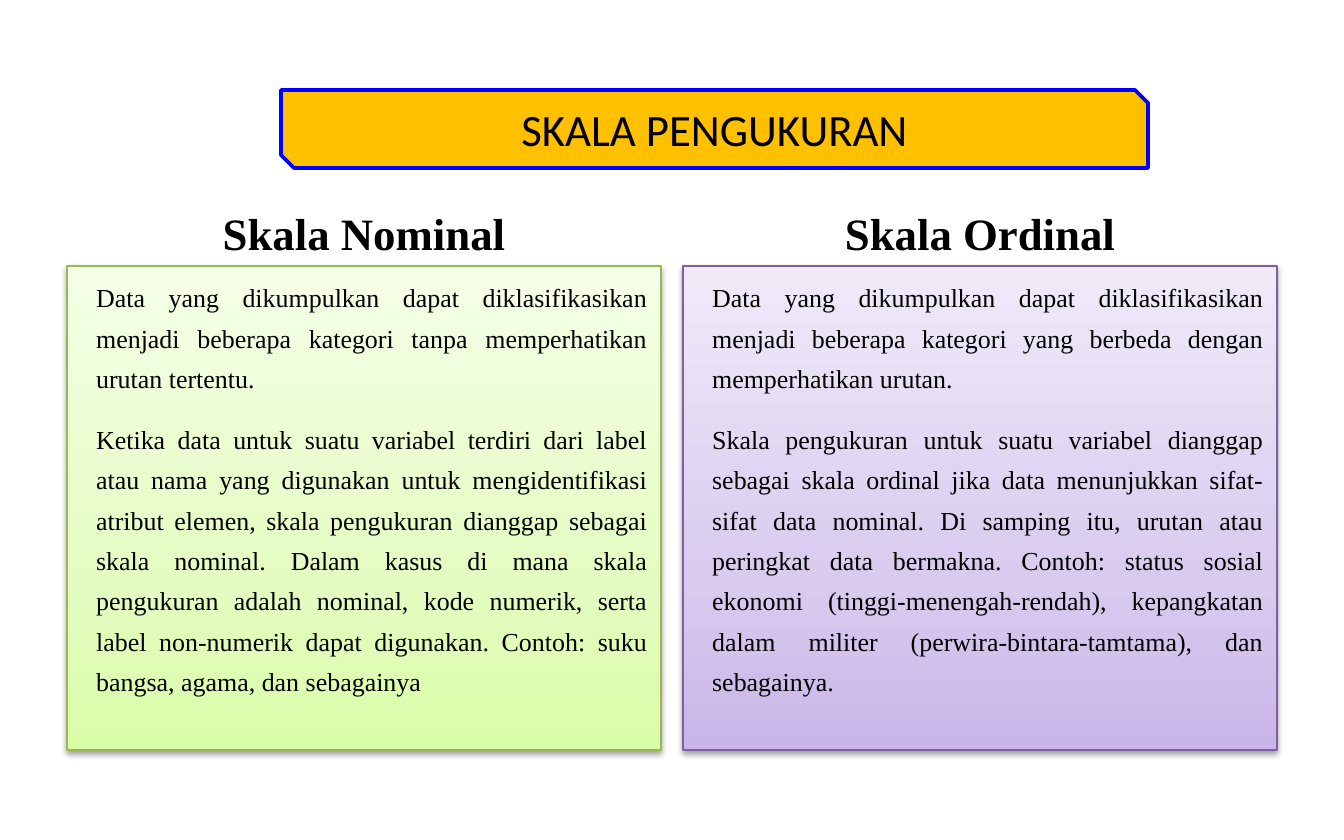
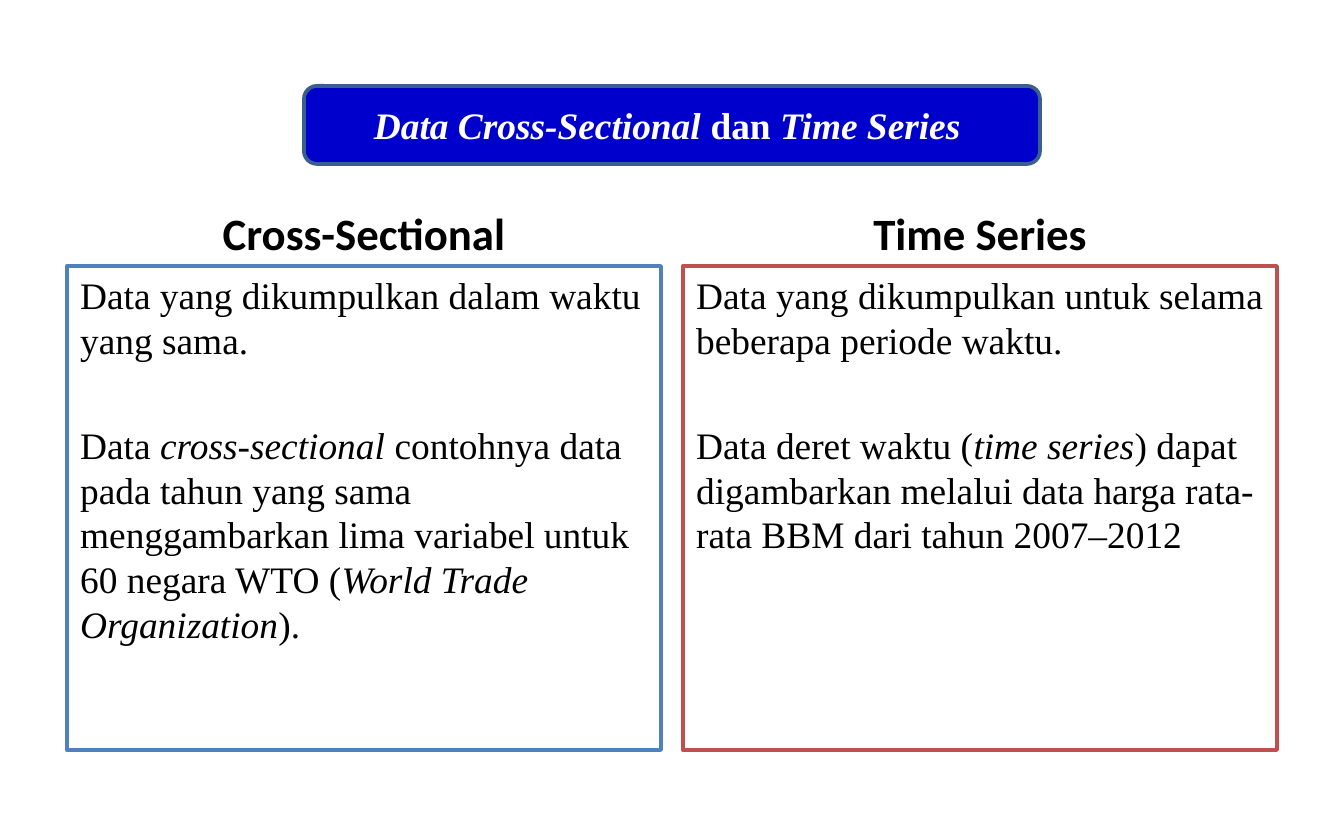
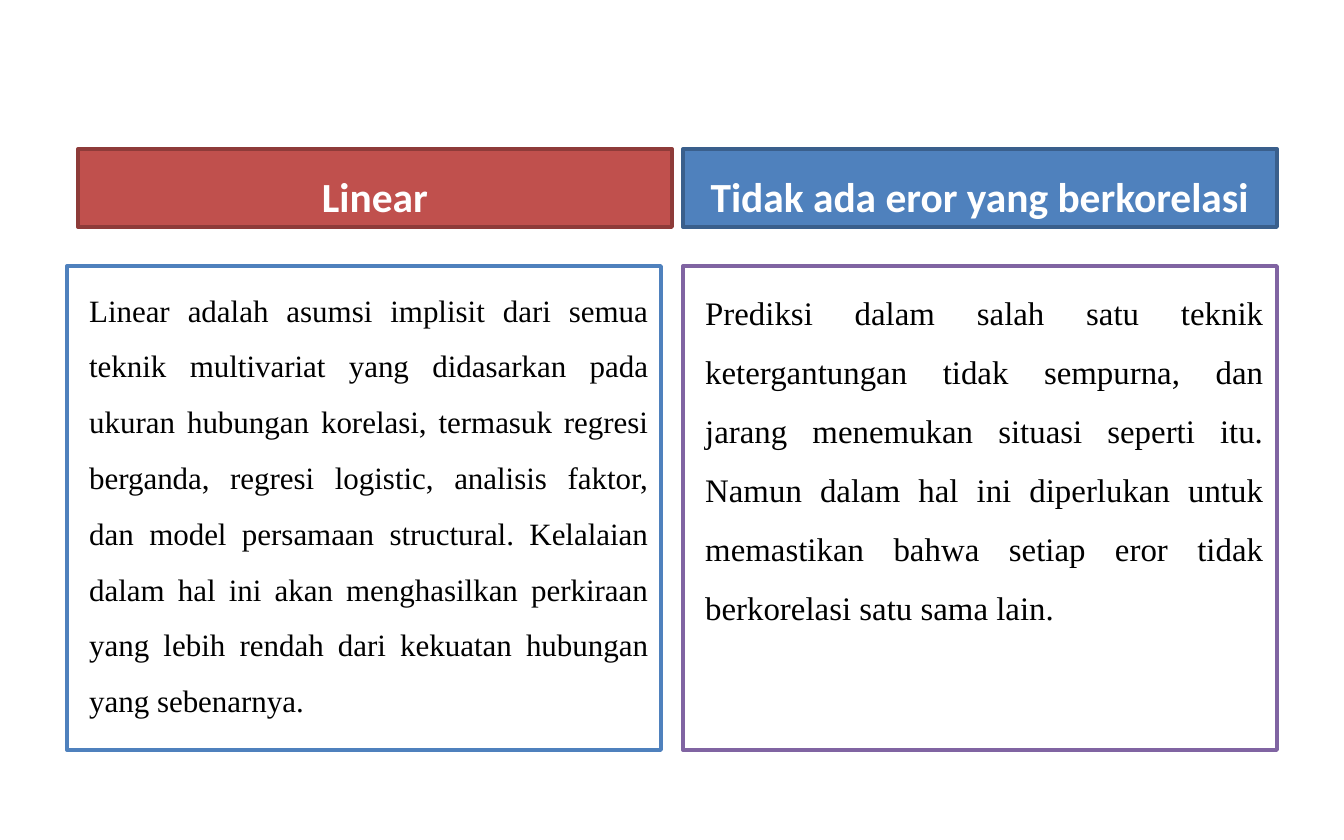
import copy
import dataclasses
import typing

import lxml.etree
import pptx
import pptx.dml.color
import pptx.enum.shapes
import pptx.enum.text
import pptx.oxml.ns
import pptx.shapes.autoshape
import pptx.slide
import pptx.util

SHAPE = pptx.enum.shapes.MSO_SHAPE
ALIGN = pptx.enum.text.PP_ALIGN
ANCHOR = pptx.enum.text.MSO_ANCHOR
SCALE = 914400 / 134.4
WIDE, HIGH = 1344, 840


@dataclasses.dataclass(frozen=True)
class Theme:
    serif: str = "Times New Roman"
    sans: str = "Calibri"
    black: str = "000000"
    white: str = "FFFFFF"
    gold: str = "FFC000"
    pure: str = "0000FF"
    royal: str = "0000CC"
    blue: str = "4F81BD"
    navy: str = "3A5F8C"
    red: str = "C0504D"
    maroon: str = "8E3B39"
    purple: str = "8064A2"
    violet: str = "7D60A0"
    green: str = "98B955"
    limes: tuple[str, ...] = ("DAFDA7", "E4FCC2", "F5FFE7")
    lilacs: tuple[str, ...] = ("C9B5E8", "D8CBEE", "F0EAF9")
    stops: tuple[float, ...] = (0, 0.35, 1)
    head: float = 24
    label: float = 22.2
    title: float = 20
    scale: float = 13.9
    linear: float = 16.6
    error: float = 17.6
    thin: float = 0.75
    thick: float = 2


T = Theme()


@dataclasses.dataclass(frozen=True)
class Style:
    font: str
    size: float
    color: str = T.black
    bold: bool = False
    align: typing.Any = ALIGN.CENTER
    anchor: typing.Any = ANCHOR.MIDDLE
    indent: int = 0
    lead: float = 1.0
    before: float = 0
    after: float = 0


class Span(typing.NamedTuple):
    text: str
    slant: bool = False


class Area(typing.NamedTuple):
    left: int
    top: int
    width: int
    height: int


Paras = list[list[Span]]


@dataclasses.dataclass(frozen=True)
class Box:
    area: Area
    style: Style
    paras: Paras
    fill: str | tuple[str, ...] | None = None
    line: str | None = None
    weight: float = T.thick
    form: typing.Any = SHAPE.RECTANGLE


def note(size: float, **more: typing.Any) -> Style:
    return Style(T.serif, size, align=ALIGN.JUSTIFY, anchor=ANCHOR.TOP, **more)


SERIF_HEAD = Style(T.serif, T.head, bold=True, anchor=ANCHOR.BOTTOM)
SANS_HEAD = dataclasses.replace(SERIF_HEAD, font=T.sans)
LABEL = Style(T.sans, T.label, T.white, True, anchor=ANCHOR.BOTTOM)
BANNER = Style(T.sans, T.head)
TITLE = Style(T.serif, T.title, T.white, True)
SCALE_NOTE = note(T.scale, indent=16, lead=1.3, before=2.8, after=8)
DATA_NOTE = Style(T.serif, T.title, align=ALIGN.LEFT, anchor=ANCHOR.TOP, before=32)
LINEAR_NOTE = note(T.linear, indent=9, lead=1.5)
ERROR_NOTE = note(T.error, indent=9, lead=1.5, after=8)

COL_WIDE, COL_GAP, MARGIN = 594, 22, 67
HEAD_HIGH = 78
HEADS, BODIES = (
    [Area(MARGIN + i * (COL_WIDE + COL_GAP), top, COL_WIDE, high) for i in range(2)]
    for top, high in ((188, HEAD_HIGH), (266, 484))
)


def plain(*texts: str) -> Paras:
    return [[Span(text)] for text in texts]


def px(count: int) -> pptx.util.Emu:
    return pptx.util.Emu(round(count * SCALE))


def rgb(code: str) -> pptx.dml.color.RGBColor:
    return pptx.dml.color.RGBColor.from_string(code)


def blend(shape: pptx.shapes.autoshape.Shape, colors: tuple[str, ...]) -> None:
    shape.fill.gradient()
    shape.fill.gradient_angle = 90
    stops = shape._element.spPr.find(".//" + pptx.oxml.ns.qn("a:gsLst"))
    stops.insert(1, copy.deepcopy(stops[0]))
    for stop, color, place in zip(shape.fill.gradient_stops, colors, T.stops):
        stop.color.rgb = rgb(color)
        stop.position = place


def shade(shape: pptx.shapes.autoshape.Shape) -> None:
    qn = pptx.oxml.ns.qn
    effects = shape._element.spPr.find(qn("a:effectLst"))
    shadow = lxml.etree.SubElement(
        effects, qn("a:outerShdw"), blurRad=str(pptx.util.Pt(3.1)),
        dist=str(pptx.util.Pt(1.6)), dir="5400000", rotWithShape="0")
    color = lxml.etree.SubElement(shadow, qn("a:srgbClr"), val=T.black)
    lxml.etree.SubElement(color, qn("a:alpha"), val="38000")


def write(frame: typing.Any, style: Style, paras: Paras) -> None:
    frame.word_wrap = True
    frame.vertical_anchor = style.anchor
    for index, spans in enumerate(paras):
        para = frame.add_paragraph() if index else frame.paragraphs[0]
        para.alignment = style.align
        para.line_spacing = style.lead
        para.space_before = pptx.util.Pt(style.before if index else 0)
        para.space_after = pptx.util.Pt(style.after)
        props = para._p.get_or_add_pPr()
        props.set("marL", str(px(style.indent)))
        props.set("indent", "0")
        for span in spans:
            run = para.add_run()
            run.text = span.text
            run.font.name = style.font
            run.font.size = pptx.util.Pt(style.size)
            run.font.bold = style.bold
            run.font.italic = span.slant
            run.font.color.rgb = rgb(style.color)


def draw(slide: pptx.slide.Slide, box: Box) -> None:
    place = [px(side) for side in box.area]
    if box.fill is None:
        shape = slide.shapes.add_textbox(*place)
    else:
        shape = slide.shapes.add_shape(box.form, *place)
        shape.shadow.inherit = False
        if isinstance(box.fill, tuple):
            blend(shape, box.fill)
            shade(shape)
        else:
            shape.fill.solid()
            shape.fill.fore_color.rgb = rgb(box.fill)
        shape.line.color.rgb = rgb(box.line)
        shape.line.width = pptx.util.Pt(box.weight)
    write(shape.text_frame, box.style, box.paras)


SCALES = [
    Box(HEADS[0], SERIF_HEAD, plain("Skala Nominal")),
    Box(BODIES[0], SCALE_NOTE, plain(
        "Data yang dikumpulkan dapat diklasifikasikan menjadi beberapa kategori "
        "tanpa memperhatikan urutan tertentu. ",
        "Ketika data untuk suatu variabel terdiri dari label atau nama yang digunakan "
        "untuk mengidentifikasi atribut elemen, skala pengukuran dianggap sebagai skala "
        "nominal. Dalam kasus di mana skala pengukuran adalah nominal, kode numerik, "
        "serta label non-numerik dapat digunakan. Contoh: suku bangsa, agama, dan "
        "sebagainya"), T.limes, T.green, T.thin),
    Box(HEADS[1], SERIF_HEAD, plain("Skala Ordinal")),
    Box(BODIES[1], SCALE_NOTE, plain(
        "Data yang dikumpulkan dapat diklasifikasikan menjadi beberapa kategori "
        "yang berbeda dengan memperhatikan urutan. ",
        "Skala pengukuran untuk suatu variabel dianggap sebagai skala ordinal jika data "
        "menunjukkan sifat-sifat data nominal. Di samping itu, urutan atau peringkat data "
        "bermakna. Contoh: status sosial ekonomi (tinggi-menengah-rendah), kepangkatan "
        "dalam militer (perwira-bintara-tamtama), dan sebagainya. "),
        T.lilacs, T.violet, T.thin),
    Box(Area(281, 90, 867, HEAD_HIGH), BANNER, plain("SKALA PENGUKURAN"),
        T.gold, T.pure, form=SHAPE.SNIP_2_DIAG_RECTANGLE),
]

SERIES = [
    Box(HEADS[0], SANS_HEAD, plain("Cross-Sectional")),
    Box(BODIES[0], DATA_NOTE, [
        [Span("Data yang dikumpulkan dalam waktu yang sama.")],
        [Span("Data "), Span("cross-sectional ", True),
         Span("contohnya data pada tahun yang sama menggambarkan lima variabel "
              "untuk 60 negara WTO ("),
         Span("World Trade Organization", True), Span(").")],
    ], T.white, T.blue),
    Box(HEADS[1], SANS_HEAD, plain("Time Series")),
    Box(BODIES[1], DATA_NOTE, [
        [Span("Data yang dikumpulkan untuk selama beberapa periode waktu.")],
        [Span("Data deret waktu ("), Span("time series", True),
         Span(") dapat digambarkan melalui data harga rata-rata BBM dari tahun "
              "2007–2012")],
    ], T.white, T.red),
    Box(Area(304, 86, 736, HEAD_HIGH), TITLE,
        [[Span("Data Cross-Sectional", True), Span(" dan "), Span("Time Series ", True)]],
        T.royal, T.navy, form=SHAPE.ROUNDED_RECTANGLE),
]

ERRORS = [
    Box(Area(78, 149, COL_WIDE, HEAD_HIGH), LABEL, plain("Linear"), T.red, T.maroon),
    Box(BODIES[0], LINEAR_NOTE, plain(
        "Linear adalah asumsi implisit dari semua teknik multivariat yang didasarkan "
        "pada ukuran hubungan korelasi, termasuk regresi berganda, regresi logistic, "
        "analisis faktor, dan model persamaan structural. Kelalaian dalam hal ini akan "
        "menghasilkan perkiraan yang lebih rendah dari kekuatan hubungan yang "
        "sebenarnya. "), T.white, T.blue),
    Box(HEADS[1]._replace(top=149), LABEL, plain("Tidak ada eror yang berkorelasi"),
        T.blue, T.navy),
    Box(BODIES[1], ERROR_NOTE, plain(
        "Prediksi dalam salah satu teknik ketergantungan tidak sempurna, dan jarang "
        "menemukan situasi seperti itu. Namun dalam hal ini diperlukan untuk memastikan "
        "bahwa setiap eror tidak berkorelasi satu sama lain. "), T.white, T.purple),
]


def main() -> None:
    deck = pptx.Presentation()
    deck.slide_width, deck.slide_height = px(WIDE), px(HIGH)
    for boxes in (SCALES, SERIES, ERRORS):
        slide = deck.slides.add_slide(deck.slide_layouts[6])
        for box in boxes:
            draw(slide, box)
    deck.save("out.pptx")


if __name__ == "__main__":
    main()
